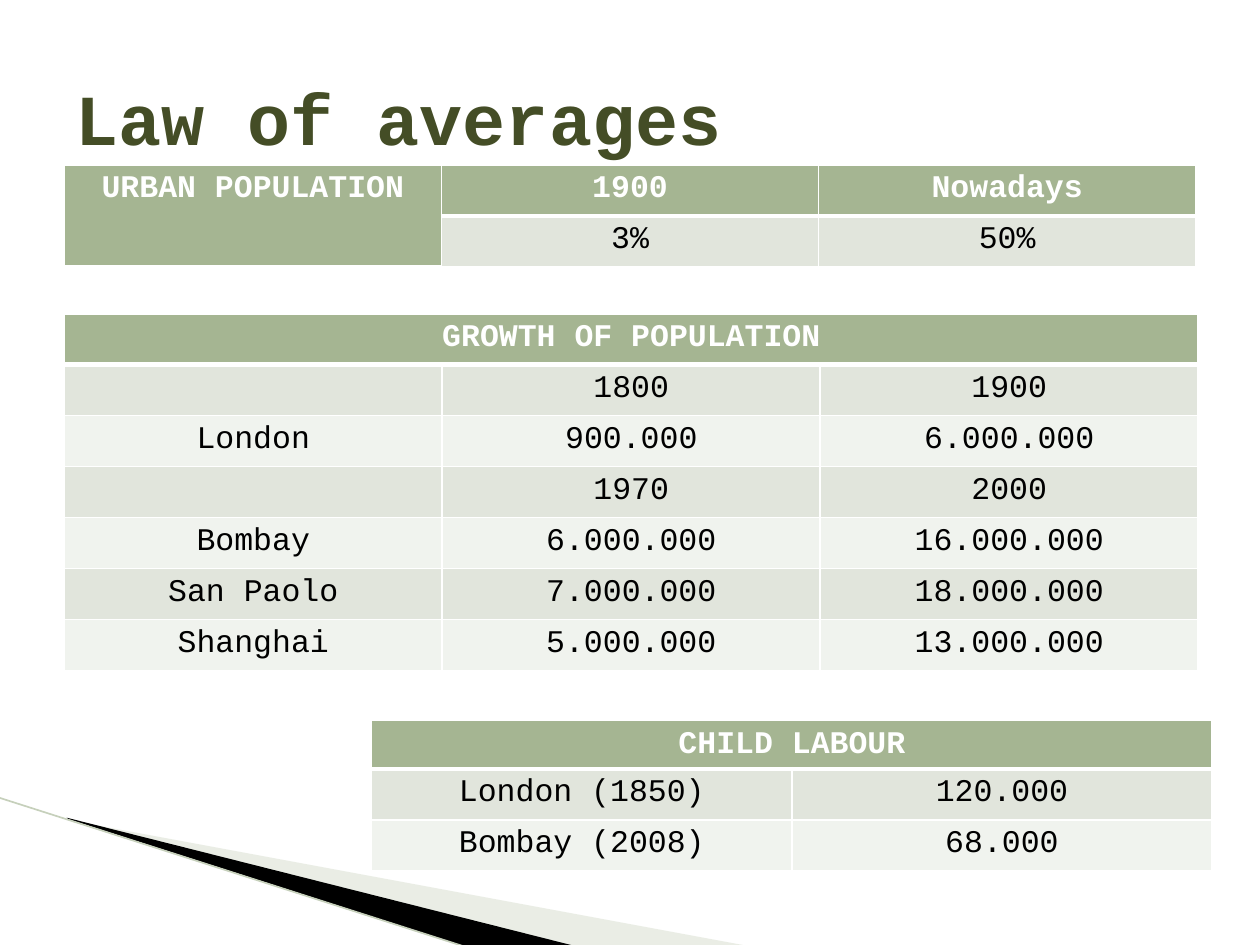
import pptx
import pptx.util
import pptx.dml.color
import pptx.enum.shapes
import pptx.enum.text
import pptx.oxml
import pptx.oxml.ns
from lxml import etree

Inches = pptx.util.Inches
Pt = pptx.util.Pt
RGBColor = pptx.dml.color.RGBColor
qn = pptx.oxml.ns.qn

FONT = "Courier New"
WHITE = RGBColor(0xFF, 0xFF, 0xFF)
BLACK = RGBColor(0, 0, 0)
OLIVE = RGBColor(0x44, 0x4D, 0x26)
HEADER = RGBColor(0xA5, 0xB5, 0x92)
BANDS = [RGBColor(0xF0, 0xF3, 0xEE), RGBColor(0xE1, 0xE5, 0xDC)]
PALE_GREEN = RGBColor(0xCB, 0xD4, 0xC0)
LINE_GREEN = RGBColor(0xC6, 0xD0, 0xBB)

# Content: merge is the (row, column) of the last cell joined to the first
TITLE = "Law of averages"
ROW_HEIGHT = 0.81 / 2
TABLES = [
    dict(left=0.51, top=2.49, width=9, header_height=ROW_HEIGHT, merge=(0, 2), rows=[
        ["GROWTH OF POPULATION", "", ""],
        ["", "1800", "1900"],
        ["London", "900.000", "6.000.000"],
        ["", "1970", "2000"],
        ["Bombay", "6.000.000", "16.000.000"],
        ["San Paolo", "7.000.000", "18.000.000"],
        ["Shanghai", "5.000.000", "13.000.000"],
    ]),
    dict(left=2.95, top=5.72, width=6.67, header_height=0.38, merge=(0, 1), rows=[
        ["CHILD LABOUR", ""],
        ["London (1850)", "120.000"],
        ["Bombay (2008)", "68.000"],
    ]),
    dict(left=0.51, top=1.31, width=8.98, header_height=ROW_HEIGHT, merge=(1, 0), rows=[
        ["URBAN POPULATION", "1900", "Nowadays"],
        ["", "3%", "50%"],
    ]),
]
# Corner wedges: points in hundredths of an inch, colour, opacity in percent
WEDGES = [
    ([(55, 651), (595, 751), (456, 751), (55, 650)], PALE_GREEN, 40),
    ([(53, 649), (457, 751), (372, 752), (54, 650)], BLACK, 100),
]


def add_wedge(page, points, color, opacity):
    builder = page.shapes.build_freeform(*points[0], scale=Inches(0.01))
    builder.add_line_segments(points[1:], close=True)
    wedge = builder.convert_to_shape()
    wedge.shadow.inherit = False
    wedge.line.fill.background()
    wedge.fill.solid()
    wedge.fill.fore_color.rgb = color
    if opacity < 100:
        tint = wedge.fill._xPr.find(".//" + qn("a:srgbClr"))
        etree.SubElement(tint, qn("a:alpha"), val=str(opacity * 1000))


def set_borders(cell, bottom):
    properties = cell._tc.get_or_add_tcPr()
    for index, (side, points) in enumerate(zip("LRTB", (1, 1, 1, bottom))):
        border = pptx.oxml.parse_xml(
            f'<a:ln{side} xmlns:a="http://schemas.openxmlformats.org/drawingml/2006/main" '
            f'w="{Pt(points)}"><a:solidFill><a:srgbClr val="{WHITE}"/></a:solidFill></a:ln{side}>')
        properties.insert(index, border)


def style_text(para, size, color, bold):
    para.font.name = FONT
    para.font.size = Pt(size)
    para.font.bold = bold
    para.font.color.rgb = color


def add_table(page, left, top, width, header_height, merge, rows):
    columns = len(rows[0])
    heights = [header_height] + [ROW_HEIGHT] * (len(rows) - 1)
    table = page.shapes.add_table(len(rows), columns, Inches(left), Inches(top),
                                  Inches(width), Inches(sum(heights))).table
    for column in table.columns:
        column.width = Inches(width / columns)
    for row, height in zip(table.rows, heights):
        row.height = Inches(height)
    table.cell(0, 0).merge(table.cell(*merge))
    for r, texts in enumerate(rows):
        for c, text in enumerate(texts):
            cell = table.cell(r, c)
            is_header = r == 0 or (r <= merge[0] and c <= merge[1])
            cell.fill.solid()
            cell.fill.fore_color.rgb = HEADER if is_header else BANDS[r % 2]
            set_borders(cell, 3 if is_header else 1)
            if r == 1 and not is_header:
                # The header rule is shared with the row below it
                cell._tc.tcPr.find(qn("a:lnT")).set("w", str(Pt(3)))
            para = cell.text_frame.paragraphs[0]
            para.text = text
            para.alignment = pptx.enum.text.PP_ALIGN.CENTER
            style_text(para, 18, WHITE if is_header else BLACK, is_header)


def main():
    deck = pptx.Presentation()
    deck.slide_width, deck.slide_height = Inches(10), Inches(7.5)
    page = deck.slides.add_slide(deck.slide_layouts[5])

    # Corner decoration
    for wedge in WEDGES:
        add_wedge(page, *wedge)
    edge = page.shapes.add_connector(pptx.enum.shapes.MSO_CONNECTOR.STRAIGHT, Inches(-0.01),
                                     Inches(6.33), Inches(3.71), Inches(7.52))
    edge.line.color.rgb = LINE_GREEN
    edge.line.width = Pt(0.95)
    etree.SubElement(edge._element.spPr, qn("a:effectLst"))

    # Title
    title = page.shapes.title
    title.left, title.top = Inches(0.5), Inches(0.3)
    title.width, title.height = Inches(9), Inches(1.25)
    frame = title.text_frame
    frame.text = TITLE
    frame.vertical_anchor = pptx.enum.text.MSO_ANCHOR.MIDDLE
    para = frame.paragraphs[0]
    para.alignment = pptx.enum.text.PP_ALIGN.LEFT
    style_text(para, 41, OLIVE, True)

    # Tables
    for table in TABLES:
        add_table(page, **table)

    deck.save("out.pptx")


if __name__ == "__main__":
    main()
